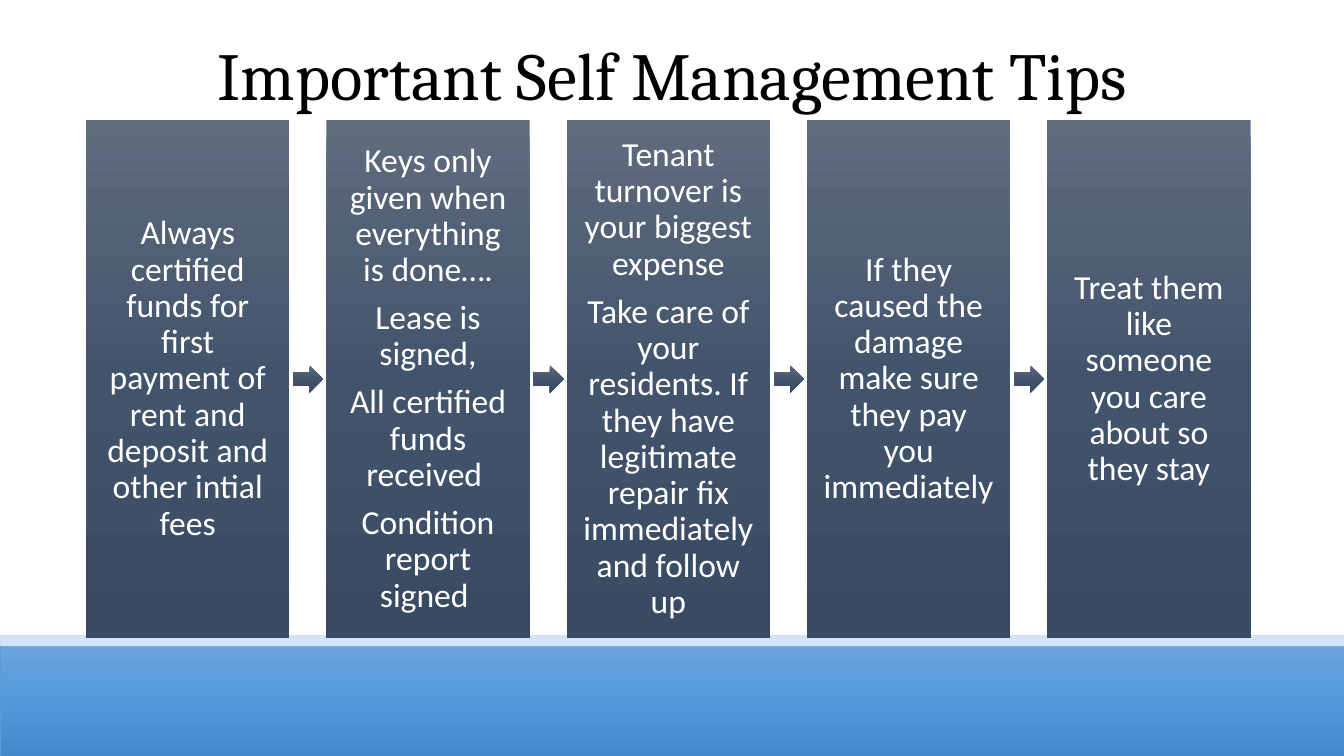
from copy import deepcopy

from lxml.etree import SubElement
from pptx import Presentation
from pptx.dml.color import RGBColor as RGB
from pptx.enum.shapes import MSO_SHAPE as SHAPE
from pptx.enum.text import MSO_ANCHOR as ANCHOR, PP_ALIGN as ALIGN
from pptx.oxml.ns import qn
from pptx.util import Inches, Pt

BLACK = RGB(0x00, 0x00, 0x00)
WHITE = RGB(0xFF, 0xFF, 0xFF)
BAND_LINE = RGB(0x5B, 0x9B, 0xD5)
BAND = (RGB(0x71, 0xA6, 0xDB), RGB(0x55, 0x9B, 0xDB), RGB(0x44, 0x8A, 0xCA))
SLATE = (RGB(0x60, 0x6B, 0x7D), RGB(0x42, 0x54, 0x6C), RGB(0x39, 0x4A, 0x62))

TIPS = [
    ["Always certified funds for first payment of rent and deposit and other intial fees"],
    ["Keys only given when everything is done….", "Lease is signed,",
     "All certified funds received ", "Condition report signed "],
    ["Tenant turnover is your biggest expense",
     "Take care of your residents. If they have legitimate repair fix immediately and follow up"],
    ["If they caused the damage make sure they pay you immediately "],
    ["Treat them like someone you care about so they stay"],
]
FIRST_COL, COL_STEP, CARD_COLS = 6.4, 17.88, 15.14
CARD_ROW, CARD_ROWS = 15.87, 68.53
ARROW_OFFSET, ARROW_COLS, ARROW_ROWS = 15.4, 2.25, 3.6


class Deck:
    heading_font = "Cambria"
    body_font = "Calibri"
    columns = rows = 100

    def __init__(self):
        self.prs = Presentation()
        self.prs.slide_width = Inches(13.33)
        self.prs.slide_height = Inches(7.5)
        self.slide = self.prs.slides.add_slide(self.prs.slide_layouts[6])

    def box(self, col, row, cols, rows):
        w = self.prs.slide_width / self.columns
        h = self.prs.slide_height / self.rows
        return [round(v) for v in (col * w, row * h, cols * w, rows * h)]

    def shape(self, kind, *cells):
        sp = self.slide.shapes.add_shape(kind, *self.box(*cells))
        sp.shadow.inherit = False
        sp.line.fill.background()
        return sp

    def gradient(self, kind, colors, *cells):
        sp = self.shape(kind, *cells)
        sp.fill.gradient()
        sp.fill.gradient_angle = 270
        stops = sp._element.spPr.find(qn("a:gradFill")).find(qn("a:gsLst"))
        stops.append(deepcopy(stops[-1]))
        for i, (stop, color) in enumerate(zip(sp.fill.gradient_stops, colors)):
            stop.position = i / 2
            stop.color.rgb = color
        return sp

    def veil(self, color, opacity, *cells):
        sp = self.shape(SHAPE.RECTANGLE, *cells)
        sp.fill.solid()
        sp.fill.fore_color.rgb = color
        clr = sp._element.spPr.find(qn("a:solidFill"))[0]
        SubElement(clr, qn("a:alpha"), val=str(opacity * 1000))

    def add_lines(self, tf, lines, font, size, color, after=0):
        tf.word_wrap = True
        for i, line in enumerate(lines):
            p = tf.add_paragraph() if i else tf.paragraphs[0]
            p.alignment = ALIGN.CENTER
            p.line_spacing = 0.9
            p.space_after = Pt(after)
            r = p.add_run()
            r.text = line
            r.font.name = font
            r.font.size = Pt(size)
            r.font.color.rgb = color

    def title(self, text, *cells):
        tf = self.slide.shapes.add_textbox(*self.box(*cells)).text_frame
        tf.vertical_anchor = ANCHOR.TOP
        tf.margin_top = Inches(0.02)
        self.add_lines(tf, [text], self.heading_font, 48, BLACK)

    def card(self, lines, *cells):
        tf = self.gradient(SHAPE.RECTANGLE, SLATE, *cells).text_frame
        tf.vertical_anchor = ANCHOR.MIDDLE
        tf.margin_left = tf.margin_right = Inches(0.16)
        tf.margin_top = tf.margin_bottom = Inches(0.17)
        self.add_lines(tf, lines, self.body_font, 24, WHITE, after=8.4)

    def arrow(self, *cells):
        self.gradient(SHAPE.RIGHT_ARROW, SLATE, *cells)


def main():
    deck = Deck()
    band = deck.gradient(SHAPE.RECTANGLE, BAND, 0, 84, 100, 16)
    band.line.color.rgb = BAND_LINE
    band.line.width = Pt(0.5)
    deck.veil(WHITE, 70, 0, 83.87, 100, 1.6)
    deck.title("Important Self Management Tips", 6.9, 5.33, 86.27, 19.33)

    arrow_row = CARD_ROW + (CARD_ROWS - ARROW_ROWS) / 2
    for i, lines in enumerate(TIPS):
        col = FIRST_COL + i * COL_STEP
        deck.card(lines, col, CARD_ROW, CARD_COLS, CARD_ROWS)
        if i < len(TIPS) - 1:
            deck.arrow(col + ARROW_OFFSET, arrow_row, ARROW_COLS, ARROW_ROWS)
    deck.prs.save("out.pptx")


if __name__ == "__main__":
    main()
